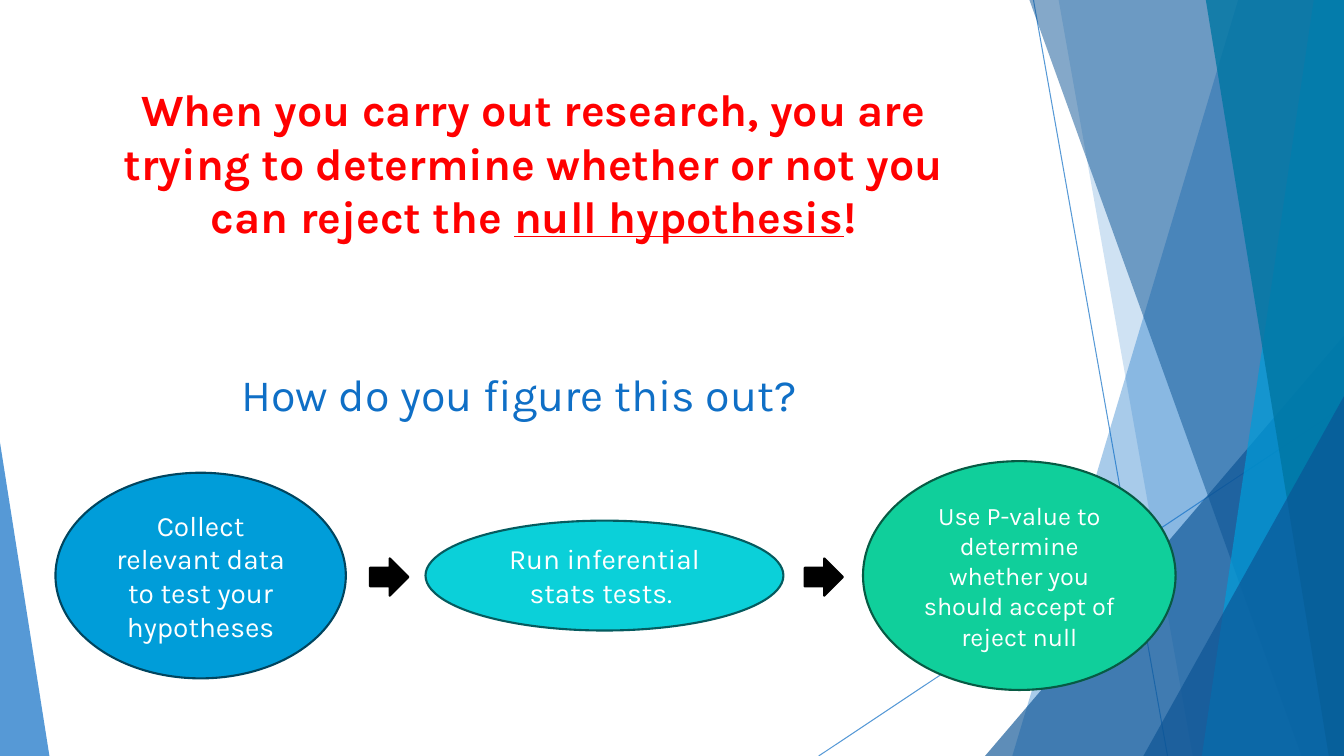
from lxml.etree import SubElement
from pptx import Presentation
from pptx.dml.color import RGBColor
from pptx.enum.shapes import MSO_CONNECTOR, MSO_SHAPE
from pptx.enum.text import MSO_ANCHOR, MSO_AUTO_SIZE, PP_ALIGN
from pptx.oxml.ns import qn
from pptx.util import Inches, Pt

WIDTH, HEIGHT = 13.33, 7.5
FONT = "Karla"
BLUE = RGBColor(0x0F, 0x6F, 0xC6)
NAVY = RGBColor(0x0B, 0x53, 0x94)
SKY = RGBColor(0x00, 0x9D, 0xD9)
TEAL = RGBColor(0x00, 0x76, 0xA3)
CYAN = RGBColor(0x0B, 0xD0, 0xD9)
GREEN = RGBColor(0x10, 0xCF, 0x9B)
SKY_EDGE = RGBColor(0x00, 0x45, 0x5F)
CYAN_EDGE = RGBColor(0x05, 0x5B, 0x5F)
GREEN_EDGE = RGBColor(0x07, 0x5B, 0x44)
RED = RGBColor(0xFF, 0x00, 0x00)
WHITE = RGBColor(0xFF, 0xFF, 0xFF)
BLACK = RGBColor(0x00, 0x00, 0x00)


def set_alpha(element, percent):
    """Make the solid colour inside an element partly transparent."""
    color = next(element.iter(qn("a:srgbClr")))
    SubElement(color, qn("a:alpha")).set("val", str(percent * 1000))


def paint(sp, fill, alpha=100, edge=None):
    """Give a shape its fill and an optional outline."""
    sp.shadow.inherit = False
    sp.fill.solid()
    sp.fill.fore_color.rgb = fill
    if alpha < 100:
        set_alpha(sp.fill._xPr.find(qn("a:solidFill")), alpha)
    if edge is None:
        sp.line.fill.background()
    else:
        sp.line.color.rgb = edge
        sp.line.width = Pt(1.5)


def add_ray(s, x1, y1, x2, y2):
    """Draw a thin translucent background line."""
    line = s.shapes.add_connector(
        MSO_CONNECTOR.STRAIGHT, Inches(x1), Inches(y1), Inches(x2), Inches(y2))
    line.line.color.rgb = BLUE
    line.line.width = Pt(0.75)
    set_alpha(line.line._ln, 70)
    SubElement(line._element.spPr, qn("a:effectLst"))


def add_band(s, top_x, bottom_x, color, alpha):
    """Fill from a slanted left edge to the right side of the slide."""
    builder = s.shapes.build_freeform(Inches(top_x), 0)
    corners = [(WIDTH, 0), (WIDTH, HEIGHT), (bottom_x, HEIGHT)]
    builder.add_line_segments([(Inches(x), Inches(y)) for x, y in corners])
    paint(builder.convert_to_shape(), color, alpha)


def add_corner(s, left, width, height, apex, color, alpha):
    """Place a right-angled triangle on the bottom edge."""
    sp = s.shapes.add_shape(
        MSO_SHAPE.ISOSCELES_TRIANGLE, Inches(left), Inches(HEIGHT - height),
        Inches(width), Inches(height))
    sp.adjustments[0] = apex
    paint(sp, color, alpha)


def add_backdrop(s):
    """Layer the facets along the slide edges."""
    add_ray(s, 10.25, 0, 11.58, HEIGHT)
    add_ray(s, WIDTH, 4.03, 8.12, HEIGHT)
    add_band(s, 12.28, 10.04, BLUE, 36)
    add_band(s, 10.5, 11.83, BLUE, 20)
    add_corner(s, 9.77, 3.56, 4.17, 1, NAVY, 66)
    add_band(s, 10.21, 12.91, NAVY, 50)
    add_band(s, 13.03, 11.92, SKY, 70)
    add_band(s, 11.96, 13.18, TEAL, 80)
    add_corner(s, 11.34, 1.99, 3.57, 1, NAVY, 66)
    add_corner(s, 0, 0.49, 3.11, 0, BLUE, 70)


def write(sp, runs, size, color, bold=False, anchor=MSO_ANCHOR.TOP):
    """Write one centred paragraph from (text, underlined) runs."""
    tf = sp.text_frame
    tf.word_wrap = True
    tf.auto_size = MSO_AUTO_SIZE.NONE
    tf.vertical_anchor = anchor
    p = tf.paragraphs[0]
    p.alignment = PP_ALIGN.CENTER
    for text, underlined in runs:
        r = p.add_run()
        r.text = text
        r.font.name = FONT
        r.font.size = Pt(size)
        r.font.bold = bold
        r.font.underline = underlined
        r.font.color.rgb = color


def add_headings(s, left, top):
    """Place the statement and the question below it."""
    title = s.shapes.title
    title.left, title.top = Inches(left), Inches(top)
    title.width, title.height = Inches(8.93), Inches(1.72)
    write(title, [
        ("When you carry out research, you are trying to determine "
         "whether or not you can reject the ", False),
        ("null hypothesis", True),
        ("!", False),
    ], 32, RED, bold=True)
    question = s.shapes.add_textbox(
        Inches(left + 1.38), Inches(top + 2.83), Inches(5.99), Inches(0.64))
    write(question, [("How do you figure this out? ", False)], 32, BLUE)


def add_step(s, left, middle, width, height, text, size, fill, edge):
    """Add one oval of the process, centred on the middle line."""
    sp = s.shapes.add_shape(
        MSO_SHAPE.OVAL, Inches(left), Inches(middle - height / 2),
        Inches(width), Inches(height))
    paint(sp, fill, edge=edge)
    write(sp, [(text, False)], size, WHITE, anchor=MSO_ANCHOR.MIDDLE)


def add_process(s, middle):
    """Lay the three steps and their arrows along a middle line."""
    steps = [
        (0.55, 2.88, 2.04, "Collect relevant data to test your hypotheses",
         20, SKY, SKY_EDGE),
        (4.22, 3.55, 1.09, "Run inferential stats tests. ",
         20, CYAN, CYAN_EDGE),
        (8.56, 3.1, 2.27,
         "Use P-value to determine whether you should accept of reject null",
         18, GREEN, GREEN_EDGE),
    ]
    for left, width, height, text, size, fill, edge in steps:
        add_step(s, left, middle, width, height, text, size, fill, edge)
    for left in (3.67, 7.98):
        arrow = s.shapes.add_shape(
            MSO_SHAPE.RIGHT_ARROW, Inches(left), Inches(middle - 0.17),
            Inches(0.38), Inches(0.37))
        paint(arrow, BLACK, edge=BLACK)


def main():
    """Build and save the slide."""
    prs = Presentation()
    prs.slide_width, prs.slide_height = Inches(WIDTH), Inches(HEIGHT)
    s = prs.slides.add_slide(prs.slide_layouts[5])
    add_backdrop(s)
    add_headings(s, 0.83, 0.76)
    add_process(s, 5.71)
    prs.save("out.pptx")


if __name__ == "__main__":
    main()
